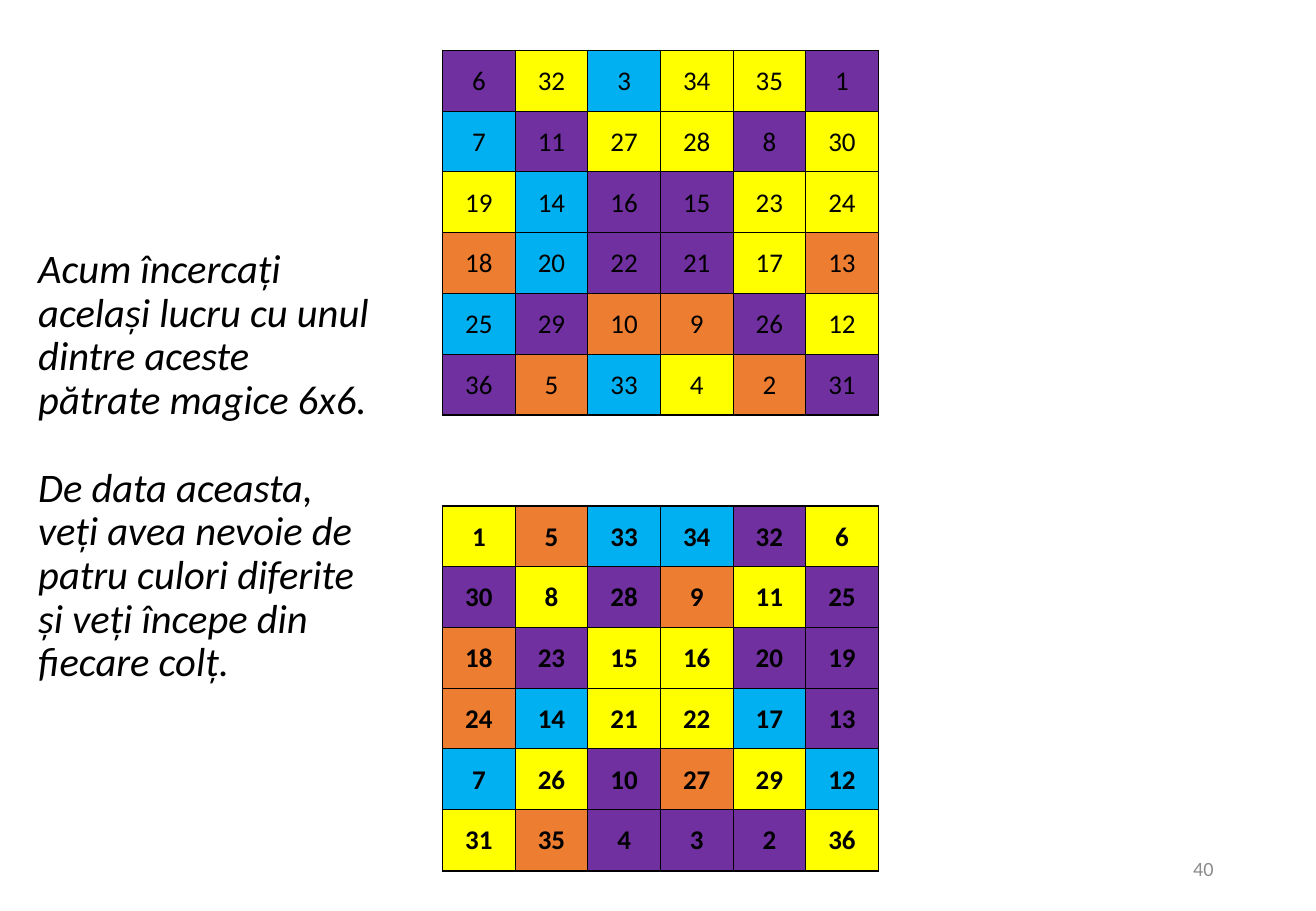
from lxml.etree import SubElement
from pptx import Presentation
from pptx.dml.color import RGBColor
from pptx.enum.text import MSO_ANCHOR, PP_ALIGN
from pptx.oxml.ns import qn
from pptx.util import Inches, Pt

COLOURS = {
    "P": "7030A0",
    "Y": "FFFF00",
    "B": "00B0F0",
    "O": "ED7D31",
    "ink": "000000",
    "number": "8C8C8C",
}

FIRST_SQUARE = [
    ([6, 32, 3, 34, 35, 1], "PYBYYP"),
    ([7, 11, 27, 28, 8, 30], "BPYYPY"),
    ([19, 14, 16, 15, 23, 24], "YBPPYY"),
    ([18, 20, 22, 21, 17, 13], "OBPPYO"),
    ([25, 29, 10, 9, 26, 12], "BPOOPY"),
    ([36, 5, 33, 4, 2, 31], "POBYOP"),
]
SECOND_SQUARE = [
    ([1, 5, 33, 34, 32, 6], "YOBBPY"),
    ([30, 8, 28, 9, 11, 25], "PYPOYP"),
    ([18, 23, 15, 16, 20, 19], "OPYYPP"),
    ([24, 14, 21, 22, 17, 13], "OBYYBP"),
    ([7, 26, 10, 27, 29, 12], "BYPOYB"),
    ([31, 35, 4, 3, 2, 36], "YOPPPY"),
]
INSTRUCTIONS = [
    "Acum încercați același lucru cu unul dintre aceste pătrate magice 6x6.",
    "De data aceasta, veți avea nevoie de patru culori diferite și veți începe din fiecare colț.",
]


class SquaresPage:
    font = "Calibri"
    column = 0.6
    row = 0.5

    def __init__(self, deck):
        self.page = deck.slides.add_slide(deck.slide_layouts[6])

    def area(self, left, top, columns, rows):
        return (Inches(left * self.column), Inches(top * self.row),
                Inches(columns * self.column), Inches(rows * self.row))

    def span(self, para, text, size, colour="ink", bold=False, italic=False):
        span = para.add_run()
        span.text = text
        span.font.name = self.font
        span.font.size = Pt(size)
        span.font.bold = bold
        span.font.italic = italic
        span.font.color.rgb = RGBColor.from_string(COLOURS[colour])

    def text(self, place, paragraphs, size, align=PP_ALIGN.LEFT, spacing=1.0, gap=0, **style):
        box = self.page.shapes.add_textbox(*self.area(*place))
        frame = box.text_frame
        frame.word_wrap = True
        frame.vertical_anchor = MSO_ANCHOR.MIDDLE
        for index, text in enumerate(paragraphs):
            para = frame.add_paragraph() if index else frame.paragraphs[0]
            para.alignment = align
            para.line_spacing = spacing
            if index:
                para.space_before = Pt(gap)
            self.span(para, text, size, **style)

    def border(self, cell, side, width):
        line = SubElement(cell._tc.get_or_add_tcPr(), qn(f"a:ln{side}"), w=str(Pt(width)))
        fill = SubElement(line, qn("a:solidFill"))
        SubElement(fill, qn("a:srgbClr"), val=COLOURS["ink"])

    def square(self, place, rows, line, filled=False, bold=False):
        count = len(rows)
        table = self.page.shapes.add_table(count, count, *self.area(*place)).table
        table.first_row = False
        table.horz_banding = False
        for row_index, (numbers, fills) in enumerate(rows):
            for column_index, (number, fill) in enumerate(zip(numbers, fills)):
                cell = table.cell(row_index, column_index)
                cell.margin_left = cell.margin_right = cell.margin_top = Inches(0.01)
                cell.margin_bottom = 0
                cell.vertical_anchor = MSO_ANCHOR.MIDDLE
                for side in "LRTB":
                    self.border(cell, side, line)
                if filled:
                    cell.fill.solid()
                    cell.fill.fore_color.rgb = RGBColor.from_string(COLOURS[fill])
                else:
                    cell.fill.background()
                para = cell.text_frame.paragraphs[0]
                para.alignment = PP_ALIGN.CENTER
                self.span(para, str(number), 16, bold=bold)

    def framed_square(self, left, top, rows, frame_rows, bold=False):
        self.square((left, top, 5.98, frame_rows), rows, line=1)
        self.square((left, top, 5.98, 6), rows, line=0.5, filled=True, bold=bold)


def main():
    deck = Presentation()
    deck.slide_width = Inches(10.83)
    deck.slide_height = Inches(7.5)
    page = SquaresPage(deck)
    page.text((0.36, 1.48, 5.02, 12.42), INSTRUCTIONS, 24, spacing=0.9, gap=26, italic=True)
    page.framed_square(6.07, 0.83, FIRST_SQUARE, frame_rows=6)
    page.framed_square(6.07, 8.33, SECOND_SQUARE, frame_rows=6.02, bold=True)
    page.text((12.74, 13.9, 4.07, 0.8), ["40"], 12, align=PP_ALIGN.RIGHT, colour="number")
    deck.save("out.pptx")


if __name__ == "__main__":
    main()
